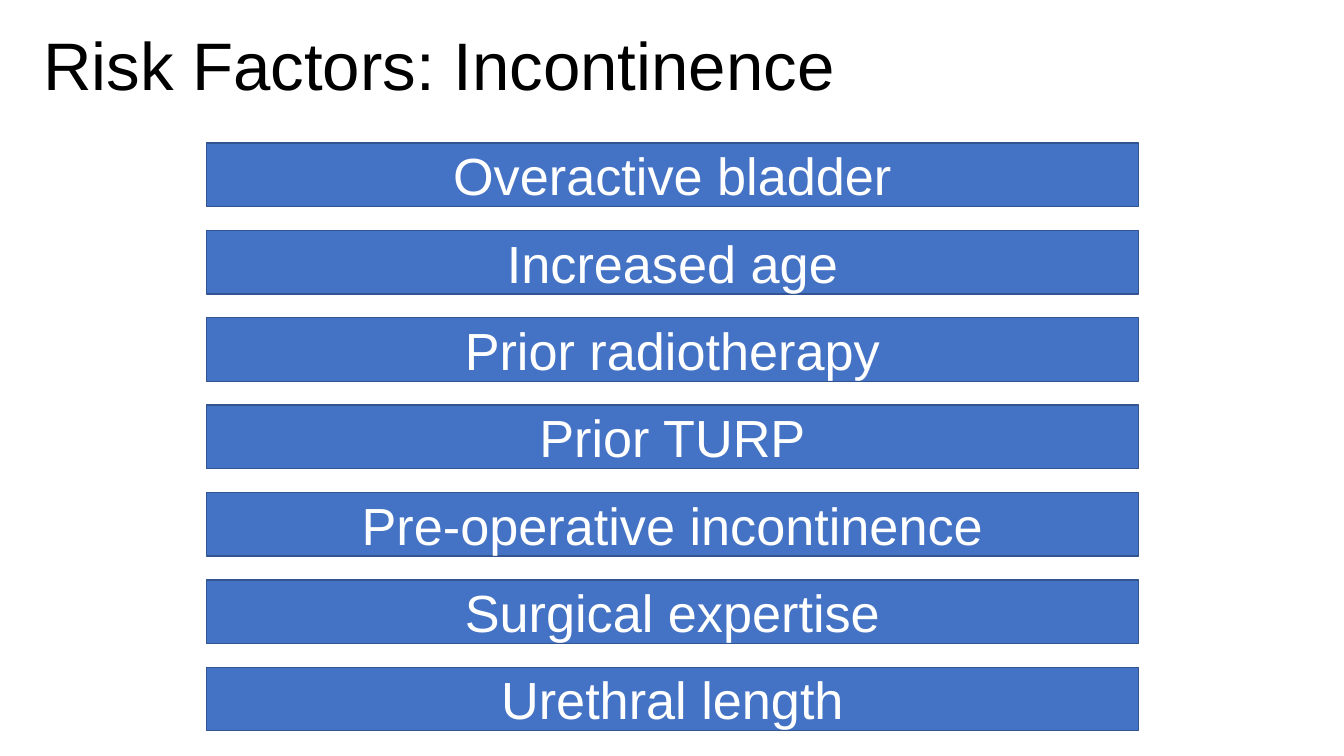
from dataclasses import dataclass

from pptx import Presentation
from pptx.dml.color import RGBColor
from pptx.enum.shapes import MSO_SHAPE
from pptx.enum.text import MSO_ANCHOR, PP_ALIGN
from pptx.util import Inches, Pt

RECTANGLE = MSO_SHAPE.RECTANGLE
MIDDLE = MSO_ANCHOR.MIDDLE
LEFT, CENTER = PP_ALIGN.LEFT, PP_ALIGN.CENTER

TITLE = "Risk Factors: Incontinence"
RISK_FACTORS = [
    "Overactive bladder",
    "Increased age",
    "Prior radiotherapy",
    "Prior TURP",
    "Pre-operative incontinence",
    "Surgical expertise",
    "Urethral length",
]


@dataclass(frozen=True)
class Theme:
    font: str = "Arial"
    title_size: float = 48
    bar_size: float = 37.3
    title_color: RGBColor = RGBColor(0x00, 0x00, 0x00)
    bar_text: RGBColor = RGBColor(0xFF, 0xFF, 0xFF)
    bar_fill: RGBColor = RGBColor(0x44, 0x72, 0xC4)
    bar_line: RGBColor = RGBColor(0x32, 0x54, 0x91)


THEME = Theme()
SLIDE_WIDTH, SLIDE_HEIGHT = 13.33, 7.5
TITLE_BOX = (0.33, 0.08, 12.67, 1.2)
BAR_LEFT, BAR_WIDTH, BAR_HEIGHT = 2.05, 9.24, 0.63
FIRST_TOP, LAST_TOP = 1.42, 6.62
BAR_PITCH = (LAST_TOP - FIRST_TOP) / (len(RISK_FACTORS) - 1)


def write(shape, text, size, color, alignment):
    frame = shape.text_frame
    frame.word_wrap = True
    frame.vertical_anchor = MIDDLE
    paragraph = frame.paragraphs[0]
    paragraph.text = text
    paragraph.alignment = alignment
    paragraph.font.name = THEME.font
    paragraph.font.size = Pt(size)
    paragraph.font.color.rgb = color
    return paragraph


def add_title(slide):
    title = slide.shapes.add_textbox(*map(Inches, TITLE_BOX))
    heading = write(title, TITLE, THEME.title_size, THEME.title_color, LEFT)
    heading.line_spacing = 0.9


def add_bar(slide, row, factor):
    box = (BAR_LEFT, FIRST_TOP + row * BAR_PITCH, BAR_WIDTH, BAR_HEIGHT)
    bar = slide.shapes.add_shape(RECTANGLE, *map(Inches, box))
    bar.shadow.inherit = False
    bar.fill.solid()
    bar.fill.fore_color.rgb = THEME.bar_fill
    bar.line.color.rgb = THEME.bar_line
    bar.line.width = Pt(1)
    write(bar, factor, THEME.bar_size, THEME.bar_text, CENTER)


def main():
    deck = Presentation()
    deck.slide_width = Inches(SLIDE_WIDTH)
    deck.slide_height = Inches(SLIDE_HEIGHT)
    slide = deck.slides.add_slide(deck.slide_layouts[6])
    add_title(slide)
    for row, factor in enumerate(RISK_FACTORS):
        add_bar(slide, row, factor)
    deck.save("out.pptx")


if __name__ == "__main__":
    main()
